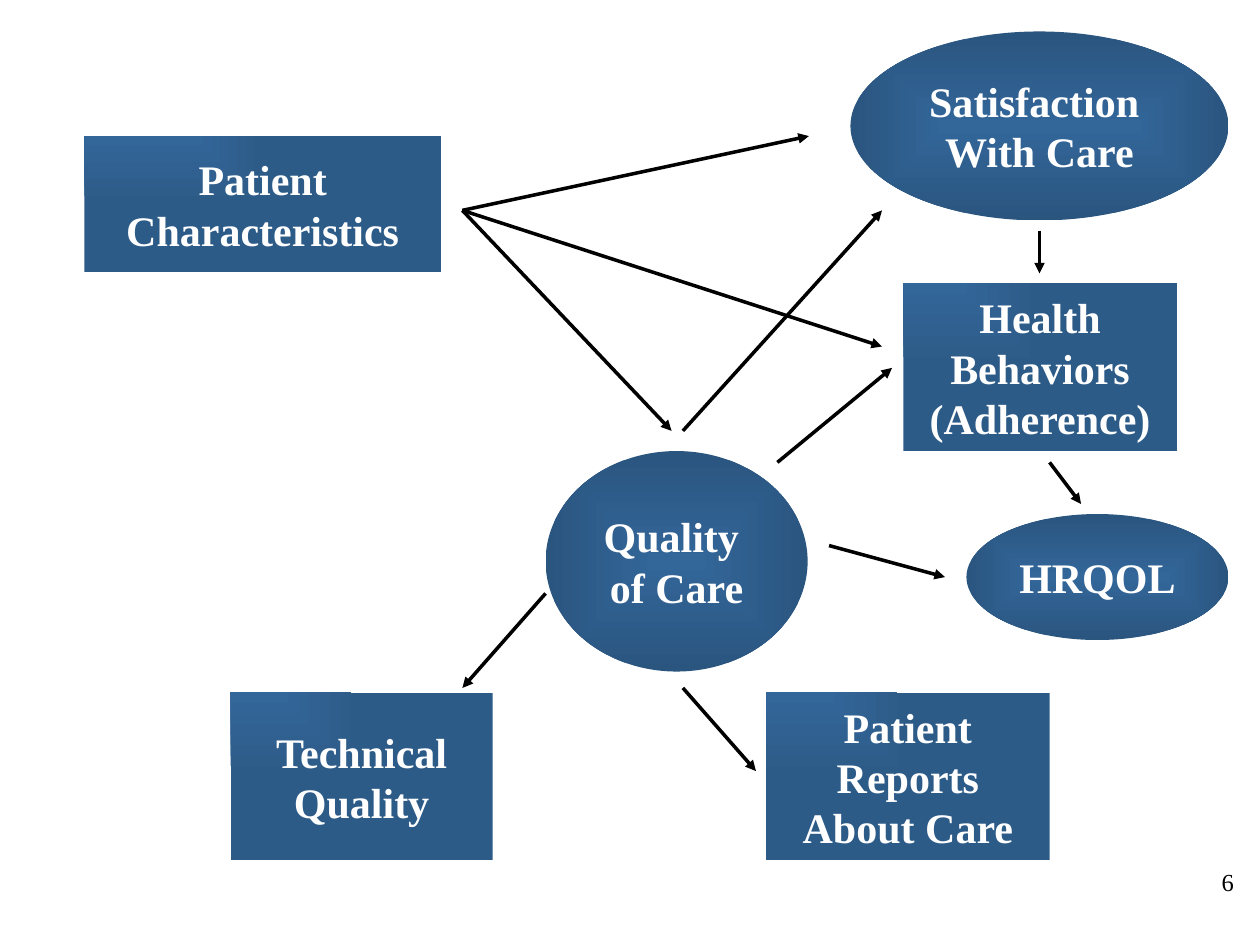
from lxml import etree
from pptx import Presentation
from pptx.dml.color import RGBColor
from pptx.enum.shapes import MSO_CONNECTOR, MSO_SHAPE
from pptx.enum.text import MSO_ANCHOR, PP_ALIGN
from pptx.oxml import parse_xml
from pptx.oxml.ns import nsdecls, qn
from pptx.util import Inches, Pt

FONT = "Times New Roman"
COLORS = {
    "center": "336699",
    "oval_edge": "2A557F",
    "box_edge": "2D5B88",
    "label": "FFFFFF",
    "ink": "000000",
}

# Concepts: text and box (left, top, width, height) in inches
OVALS = [
    ("HRQOL", (7.67, 4.08, 2.08, 1)),
    ("Satisfaction \vWith Care", (6.75, 0.25, 3, 1.5)),
    ("Quality \nof Care", (4.33, 3.58, 2.08, 1.75)),
]
BOXES = [
    ("Health\nBehaviors\n(Adherence)", (7.17, 2.25, 2.17, 1.33)),
    ("Technical Quality", (1.83, 5.5, 2.08, 1.33)),
    ("Patient Reports About Care", (6.08, 5.5, 2.25, 1.33)),
    ("Patient Characteristics", (0.67, 1.08, 2.83, 1.08)),
]

# Influences: start and end points in inches
PATIENT_EXIT = (3.67, 1.67)
ARROWS = [
    ((6.17, 3.67), (7.08, 2.92)),  # quality to behaviors
    ((6.58, 4.33), (7.5, 4.58)),  # quality to HRQOL
    ((8.33, 3.67), (8.58, 4)),  # behaviors to HRQOL
    ((5.42, 3.42), (7, 1.67)),  # quality to satisfaction
    ((8.25, 1.83), (8.25, 2.17)),  # satisfaction to behaviors
    ((5.42, 5.46), (6, 6.12)),  # quality to patient reports
    (PATIENT_EXIT, (6.42, 1.08)),  # patient to satisfaction
    (PATIENT_EXIT, (7, 2.75)),  # patient to behaviors
    (PATIENT_EXIT, (5.33, 3.42)),  # patient to quality
    ((4.33, 4.71), (3.67, 5.46)),  # quality to technical quality
]


def write(frame, text, size, color, align, bold=False):
    frame.text = text
    for paragraph in frame.paragraphs:
        paragraph.alignment = align
        for run in paragraph.runs:
            run.font.name = FONT
            run.font.size = Pt(size)
            run.font.bold = bold
            run.font.color.rgb = RGBColor.from_string(COLORS[color])


def fill_from_focus(shape, edge, path, focus):
    """Fill with a path gradient; focus is left, top, right, bottom in percent."""
    left, top, right, bottom = (percent * 1000 for percent in focus)
    gradient = parse_xml(
        f'<a:gradFill {nsdecls("a")} rotWithShape="0"><a:gsLst>'
        f'<a:gs pos="0"><a:srgbClr val="{COLORS["center"]}"/></a:gs>'
        f'<a:gs pos="100000"><a:srgbClr val="{COLORS[edge]}"/></a:gs></a:gsLst>'
        f'<a:path path="{path}"><a:fillToRect l="{left}" t="{top}" '
        f'r="{right}" b="{bottom}"/></a:path></a:gradFill>'
    )
    shape._element.spPr.find(qn("a:prstGeom")).addnext(gradient)


def add_concept(slide, preset, text, box, wrap):
    concept = slide.shapes.add_shape(preset, *map(Inches, box))
    concept.shadow.inherit = False
    concept.line.fill.background()
    frame = concept.text_frame
    frame.word_wrap = wrap
    frame.vertical_anchor = MSO_ANCHOR.MIDDLE
    write(frame, text, 24, "label", PP_ALIGN.CENTER, bold=True)
    return concept


def add_oval(slide, text, box):
    oval = add_concept(slide, MSO_SHAPE.OVAL, text, box, wrap=False)
    fill_from_focus(oval, "oval_edge", "shape", (50, 50, 50, 50))


def add_box(slide, text, box):
    rectangle = add_concept(slide, MSO_SHAPE.RECTANGLE, text, box, wrap=True)
    fill_from_focus(rectangle, "box_edge", "rect", (0, 0, 100, 100))


def add_arrow(slide, start, end):
    arrow = slide.shapes.add_connector(
        MSO_CONNECTOR.STRAIGHT, *map(Inches, start + end)
    )
    arrow.line.color.rgb = RGBColor.from_string(COLORS["ink"])
    arrow.line.width = Pt(2)
    etree.SubElement(arrow.line._get_or_add_ln(), qn("a:tailEnd"), type="triangle")
    etree.SubElement(arrow._element.spPr, qn("a:effectLst"))


def add_page_number(slide, text, box):
    number = slide.shapes.add_textbox(*map(Inches, box))
    number.text_frame.word_wrap = True
    write(number.text_frame, text, 14, "ink", PP_ALIGN.RIGHT)


def main():
    prs = Presentation()
    prs.slide_width, prs.slide_height = Inches(10), Inches(7.5)
    slide = prs.slides.add_slide(prs.slide_layouts[6])

    add_page_number(slide, "6", (7.27, 6.83, 2.62, 0.52))
    for text, box in OVALS:
        add_oval(slide, text, box)
    for text, box in BOXES:
        add_box(slide, text, box)
    for start, end in ARROWS:
        add_arrow(slide, start, end)

    prs.save("out.pptx")


if __name__ == "__main__":
    main()
